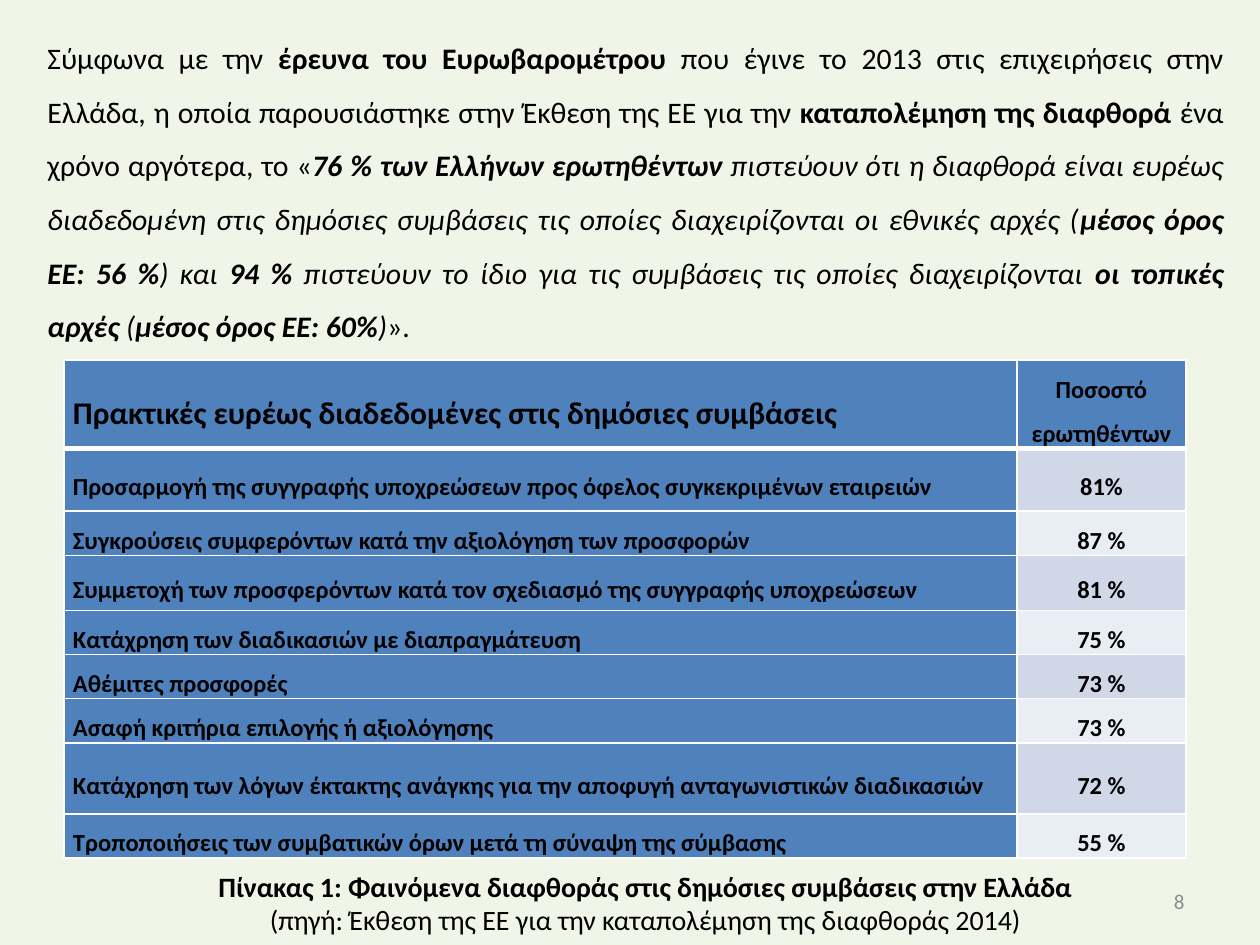
from dataclasses import dataclass

from lxml.etree import SubElement
from pptx import Presentation
from pptx.dml.color import RGBColor as Rgb
from pptx.enum.text import MSO_ANCHOR as Anchor, PP_ALIGN as Align
from pptx.oxml.ns import qn
from pptx.util import Emu, Pt

EMU_PER_INCH, PX_PER_INCH = 914400, 126


@dataclass(frozen=True)
class Theme:
    """Colours, font and type sizes of the slide."""
    font: str = "Calibri"
    background: str = "F0F5E7"
    ink: str = "000000"
    muted: str = "8C8C8C"
    accent: str = "4F81BD"
    bands: tuple = ("D0D8E8", "E9EDF4")
    rule: str = "FFFFFF"
    thin: int = 1
    thick: int = 3
    intro_size: int = 17
    heading_size: int = 18
    cell_size: int = 14
    caption_size: int = 16
    number_size: int = 12


THEME = Theme()

INTRO = [
    ("Σύμφωνα με την ", ""),
    ("έρευνα του Ευρωβαρομέτρου ", "b"),
    ("που έγινε το 2013 στις επιχειρήσεις στην Ελλάδα, η οποία παρουσιάστηκε "
     "στην Έκθεση της ΕΕ για την ", ""),
    ("καταπολέμηση της διαφθορά ", "b"),
    ("ένα χρόνο αργότερα, το «", ""),
    ("76 % των Ελλήνων ερωτηθέντων ", "bi"),
    ("πιστεύουν ότι η διαφθορά είναι ευρέως διαδεδομένη στις δημόσιες "
     "συμβάσεις τις οποίες διαχειρίζονται οι εθνικές αρχές (", "i"),
    ("μέσος όρος ΕΕ: 56 %", "bi"),
    (") και ", "i"),
    ("94 %", "bi"),
    (" πιστεύουν το ίδιο για τις συμβάσεις τις οποίες διαχειρίζονται ", "i"),
    ("οι τοπικές αρχές ", "bi"),
    ("(", "i"),
    ("μέσος όρος ΕΕ: 60%", "bi"),
    (")", "i"),
    ("». ", ""),
]

HEADINGS = ("Πρακτικές ευρέως διαδεδομένες στις δημόσιες συμβάσεις",
            "Ποσοστό ερωτηθέντων")
HEADING_HEIGHT = 87
COLUMN_WIDTHS = (953, 169)

PRACTICES = [
    ("Προσαρμογή της συγγραφής υποχρεώσεων προς όφελος συγκεκριμένων εταιρειών", "81%", 63),
    ("Συγκρούσεις συμφερόντων κατά την αξιολόγηση των προσφορών", "87 %", 44),
    ("Συμμετοχή των προσφερόντων κατά τον σχεδιασμό της συγγραφής υποχρεώσεων", "81 %", 55),
    ("Κατάχρηση των διαδικασιών με διαπραγμάτευση", "75 %", 44),
    ("Αθέμιτες προσφορές", "73 %", 44),
    ("Ασαφή κριτήρια επιλογής ή αξιολόγησης", "73 %", 44),
    ("Κατάχρηση των λόγων έκτακτης ανάγκης για την αποφυγή ανταγωνιστικών διαδικασιών",
     "72 %", 71),
    ("Τροποποιήσεις των συμβατικών όρων μετά τη σύναψη της σύμβασης", "55 %", 44),
]

CAPTION = [
    [("Πίνακας 1: Φαινόμενα διαφθοράς στις δημόσιες συμβάσεις στην Ελλάδα", "b")],
    [("(πηγή: Έκθεση της ΕΕ για την καταπολέμηση της διαφθοράς 2014)", "")],
]


def px(length):
    """Turn whole pixels into EMU."""
    return Emu(round(length * EMU_PER_INCH / PX_PER_INCH))


def write_runs(paragraph, runs, size, align, color=THEME.ink, spacing=None):
    """Fill a paragraph with (text, style) runs."""
    paragraph.alignment = align
    if spacing:
        paragraph.line_spacing = spacing
    for text, style in runs:
        run = paragraph.add_run()
        run.text = text
        run.font.name = THEME.font
        run.font.size = Pt(size)
        run.font.bold = "b" in style
        run.font.italic = "i" in style
        run.font.color.rgb = Rgb.from_string(color)


def add_text(slide, box, paragraphs, size, align, anchor=Anchor.TOP, **look):
    """Add a wrapping text box of styled paragraphs."""
    frame = slide.shapes.add_textbox(*map(px, box)).text_frame
    frame.word_wrap = True
    frame.vertical_anchor = anchor
    for index, runs in enumerate(paragraphs):
        paragraph = frame.add_paragraph() if index else frame.paragraphs[0]
        write_runs(paragraph, runs, size, align, **look)


def add_borders(cell, top, bottom):
    """Draw the four rules around a cell."""
    properties = cell._tc.get_or_add_tcPr()
    widths = {"lnL": THEME.thin, "lnR": THEME.thin, "lnT": top, "lnB": bottom}
    for side, width in widths.items():
        line = SubElement(properties, qn(f"a:{side}"), w=str(Pt(width)))
        fill = SubElement(line, qn("a:solidFill"))
        SubElement(fill, qn("a:srgbClr"), val=THEME.rule)


def style_cell(cell, text, size, align, fill, top, bottom):
    """Write, border and fill one table cell."""
    cell.margin_left = cell.margin_right = px(9)
    cell.margin_top = cell.margin_bottom = 0
    cell.vertical_anchor = Anchor.MIDDLE
    add_borders(cell, top, bottom)
    cell.fill.solid()
    cell.fill.fore_color.rgb = Rgb.from_string(fill)
    write_runs(cell.text_frame.paragraphs[0], [(text, "b")], size, align, spacing=1.5)


def add_practices_table(slide, left, top):
    """Add the table of practices and shares of respondents."""
    rows = [(*HEADINGS, HEADING_HEIGHT), *PRACTICES]
    table = slide.shapes.add_table(
        len(rows), len(COLUMN_WIDTHS), px(left), px(top),
        px(sum(COLUMN_WIDTHS)), px(sum(row[-1] for row in rows))).table
    for column, width in zip(table.columns, COLUMN_WIDTHS):
        column.width = px(width)
    for index, (practice, share, height) in enumerate(rows):
        table.rows[index].height = px(height)
        is_heading = index == 0
        practice_size = THEME.heading_size if is_heading else THEME.cell_size
        share_fill = THEME.accent if is_heading else THEME.bands[(index - 1) % 2]
        rules = (THEME.thick if index == 1 else THEME.thin,
                 THEME.thick if is_heading else THEME.thin)
        style_cell(table.cell(index, 0), practice, practice_size, Align.LEFT,
                   THEME.accent, *rules)
        style_cell(table.cell(index, 1), share, THEME.cell_size, Align.CENTER,
                   share_fill, *rules)


def main():
    """Build and save the slide."""
    deck = Presentation()
    deck.slide_width, deck.slide_height = px(1260), px(945)
    slide = deck.slides.add_slide(deck.slide_layouts[6])
    slide.background.fill.solid()
    slide.background.fill.fore_color.rgb = Rgb.from_string(THEME.background)
    add_text(slide, (903, 876, 294, 50), [[("8", "")]], THEME.number_size,
             Align.RIGHT, Anchor.MIDDLE, color=THEME.muted)
    add_text(slide, (35, 16, 1201, 338), [INTRO], THEME.intro_size,
             Align.JUSTIFY, spacing=1.5)
    add_practices_table(slide, 64, 360)
    add_text(slide, (194, 863, 903, 81), CAPTION, THEME.caption_size, Align.CENTER)
    deck.save("out.pptx")


if __name__ == "__main__":
    main()
